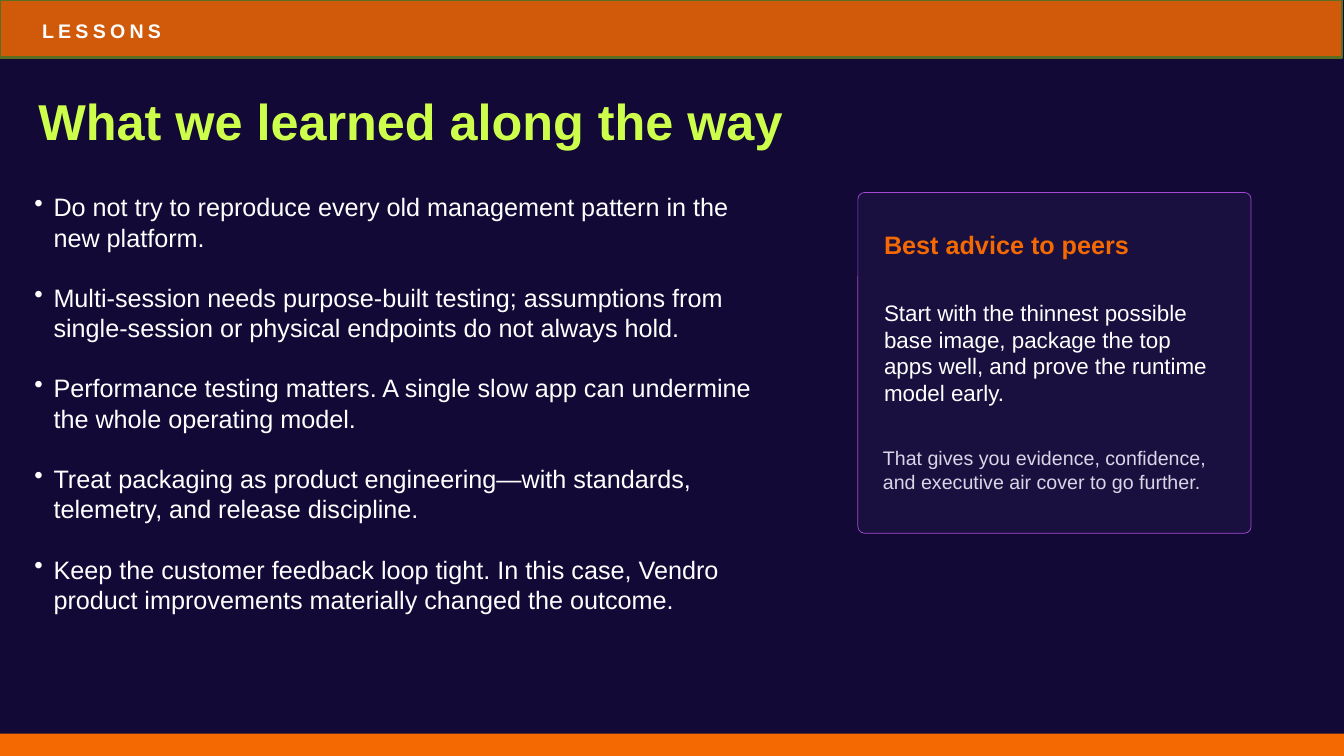
from dataclasses import dataclass

from lxml import etree
from pptx import Presentation, util as u
from pptx.dml.color import RGBColor
from pptx.enum import shapes, text
from pptx.oxml import ns

FONT = "Arial"
WHITE = "FEFFFF"
ORANGE = "F46901"


@dataclass
class Box:
    left: float
    top: float
    width: float
    height: float

    def place(self) -> list:
        return [u.Cm(n) for n in (self.left, self.top, self.width, self.height)]


@dataclass
class Panel:
    box: Box
    fill: str
    line: str = ""
    weight: float = 0
    round: float = 0


@dataclass
class Label:
    box: Box
    words: list[str]
    format: dict


def paint(target, color: str) -> None:
    """Give a fill one solid colour."""
    target.solid()
    target.fore_color.rgb = RGBColor.from_string(color)


def draw_panel(slide, panel: Panel) -> None:
    kind = shapes.MSO_SHAPE
    preset = kind.ROUNDED_RECTANGLE if panel.round else kind.RECTANGLE
    shape = slide.shapes.add_shape(preset, *panel.box.place())
    shape.shadow.inherit = False
    paint(shape.fill, panel.fill)
    if panel.round:
        shape.adjustments[0] = panel.round
    if panel.line:
        paint(shape.line.fill, panel.line)
        shape.line.width = u.Pt(panel.weight)
    else:
        shape.line.fill.background()


def add_bullet(para, indent: float) -> None:
    props = para._p.get_or_add_pPr()
    props.set("marL", str(u.Cm(indent)))
    props.set("indent", str(-u.Cm(indent)))
    etree.SubElement(props, ns.qn("a:buChar")).set("char", "•")


def add_text(slide, box: Box, words: list[str], *, size: float,
             color: str = WHITE, bold: bool = False, inset: float = 0,
             middle: bool = True, indent: float = 0, gap: float = 0,
             track: float = 0) -> None:
    frame = slide.shapes.add_textbox(*box.place()).text_frame
    frame.word_wrap = True
    anchor = text.MSO_ANCHOR
    frame.vertical_anchor = anchor.MIDDLE if middle else anchor.TOP
    frame.margin_left = frame.margin_right = u.Cm(inset)
    frame.margin_top = frame.margin_bottom = u.Cm(inset)
    for i, line in enumerate(words):
        para = frame.add_paragraph() if i else frame.paragraphs[0]
        if i and gap:
            para.space_before = u.Pt(gap)
        if indent:
            add_bullet(para, indent)
        run = para.add_run()
        run.text = line
        run.font.name = FONT
        run.font.size = u.Pt(size)
        run.font.bold = bold
        paint(run.font.fill, color)
        if track:
            run.font._element.set("spc", str(round(track * 100)))


# Bars and advice card
PANELS = [
    Panel(Box(0, 18.49, 33.87, 0.56), ORANGE),
    Panel(Box(21.62, 4.85, 9.91, 8.59), "19103F", "A449D4", 0.5, 0.02),
    Panel(Box(0, 0, 33.83, 1.45), "D05A09", "5A6F21", 1.5),
]

LESSONS = [
    "Do not try to reproduce every old management pattern in the new platform.",
    "Multi-session needs purpose-built testing; assumptions from "
    "single-session or physical endpoints do not always hold.",
    "Performance testing matters. A single slow app can undermine "
    "the whole operating model.",
    "Treat packaging as product engineering—with standards, "
    "telemetry, and release discipline.",
    "Keep the customer feedback loop tight. In this case, Vendro "
    "product improvements materially changed the outcome.",
]

LABELS = [
    # Header and title
    Label(Box(1.06, 0.33, 29.6, 0.89), ["LESSONS"],
          dict(size=14, color="FFFFFF", bold=True, track=3)),
    Label(Box(0.97, 2.26, 27.43, 1.57), ["What we learned along the way"],
          dict(size=36, color="CEFE4C", bold=True)),
    # Lessons, one blank line apart
    Label(Box(0.79, 4.75, 18.64, 12.14), LESSONS,
          dict(size=18, inset=0.08, middle=False, indent=0.48, gap=21.5)),
    # Advice card
    Label(Box(22.28, 5.79, 6.6, 0.76), ["Best advice to peers"],
          dict(size=18, color=ORANGE, bold=True)),
    Label(Box(22.28, 7.54, 8.56, 2.69),
          ["Start with the thinnest possible base image, package the top "
           "apps well, and prove the runtime model early."], dict(size=16)),
    Label(Box(22.25, 11.13, 8.41, 1.4),
          ["That gives you evidence, confidence, and executive air cover "
           "to go further."], dict(size=14, color="D9D6E8")),
]


def main() -> None:
    deck = Presentation()
    deck.slide_width, deck.slide_height = u.Cm(33.87), u.Cm(19.05)
    slide = deck.slides.add_slide(deck.slide_layouts[6])
    paint(slide.background.fill, "120936")
    for panel in PANELS:
        draw_panel(slide, panel)
    for label in LABELS:
        add_text(slide, label.box, label.words, **label.format)
    deck.save("out.pptx")


if __name__ == "__main__":
    main()
